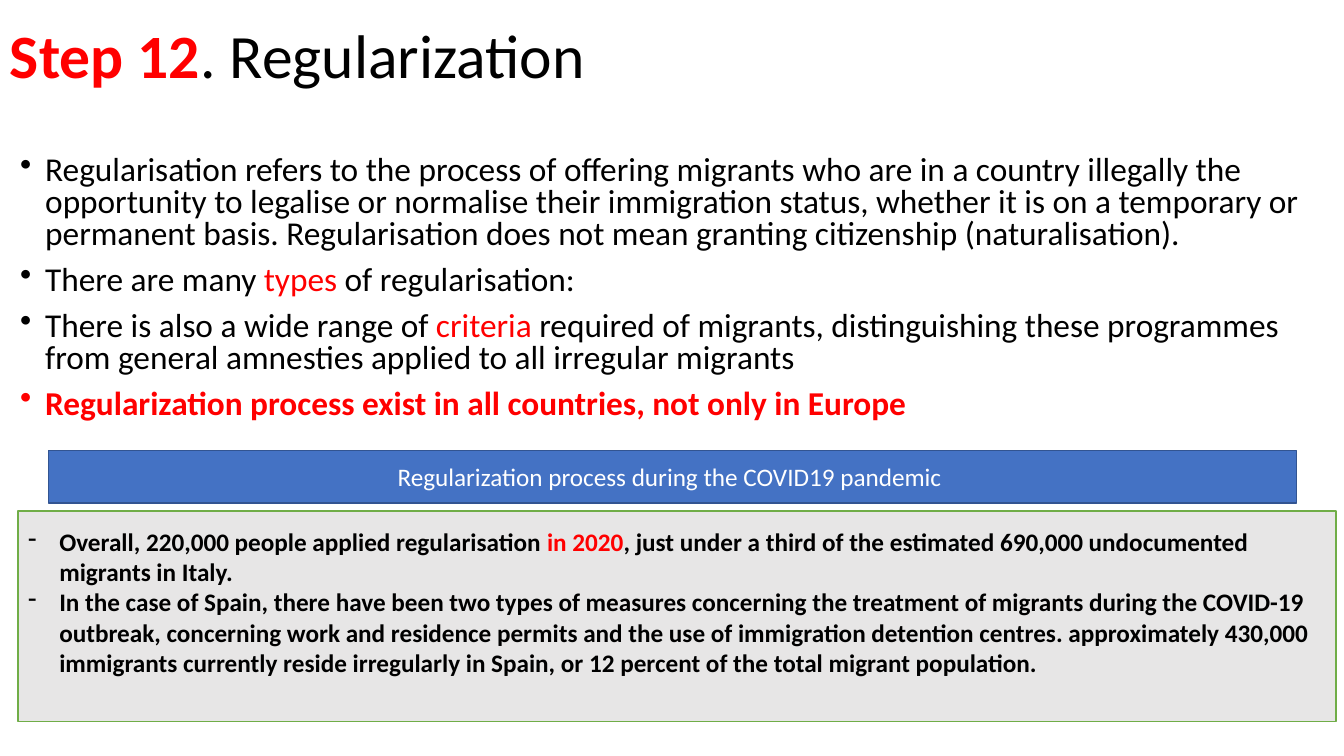
"""Build the slide about Step 12, regularization."""
from dataclasses import dataclass

from lxml.etree import SubElement
from pptx import Presentation
from pptx.dml.color import RGBColor
from pptx.enum.shapes import MSO_SHAPE
from pptx.enum.text import MSO_ANCHOR as Anchor, PP_ALIGN as Align
from pptx.oxml.ns import qn
from pptx.shapes.autoshape import Shape
from pptx.slide import Slide
from pptx.util import Inches, Pt

FONT = "Calibri"
BLACK = RGBColor(0x00, 0x00, 0x00)
WHITE = RGBColor(0xFF, 0xFF, 0xFF)
RED = RGBColor(0xFF, 0x00, 0x00)
BLUE = RGBColor(0x44, 0x72, 0xC4)
DARK_BLUE = RGBColor(0x32, 0x54, 0x91)
GREY = RGBColor(0xE7, 0xE6, 0xE6)
GREEN = RGBColor(0x70, 0xAD, 0x47)


@dataclass(frozen=True)
class Part:
    text: str
    color: RGBColor = BLACK
    bold: bool = False


@dataclass(frozen=True)
class Block:
    left: float
    top: float
    width: float
    height: float
    size: float
    paragraphs: list[list[Part]]
    fill: RGBColor | None = None
    outline: RGBColor | None = None
    anchor: Anchor = Anchor.TOP
    align: Align = Align.LEFT
    bullet: str = ""
    indent: float = 0
    line_spacing: float = 1
    space_before: float = 0
    top_inset: float = 0.05


BLOCKS = [
    Block(0, 0, 13.25, 1.17, 44,
          [[Part("Step 12", RED, True), Part(". Regularization")]],
          anchor=Anchor.MIDDLE, line_spacing=0.9),
    Block(0.1, 1.5, 13.15, 2.89, 23.8, [
        [Part("Regularisation refers to the process of offering migrants who are in a "
              "country illegally the opportunity to legalise or normalise their "
              "immigration status, whether it is on a temporary or permanent basis. "
              "Regularisation does not mean granting citizenship (naturalisation).")],
        [Part("There are many "), Part("types ", RED), Part("of regularisation:")],
        [Part("There is also a wide range of "), Part("criteria ", RED),
         Part("required of migrants, distinguishing these programmes from general "
              "amnesties applied to all irregular migrants")],
        [Part("Regularization process exist in all countries, not only in Europe",
              RED, True)],
    ], bullet="•", indent=0.25, line_spacing=0.8, space_before=10),
    Block(0.48, 4.47, 12.38, 0.52, 18,
          [[Part("Regularization process during the COVID19 pandemic ", WHITE)]],
          fill=BLUE, outline=DARK_BLUE, anchor=Anchor.MIDDLE, align=Align.CENTER),
    Block(0.18, 5.07, 13.07, 2.09, 18, [
        [Part("Overall, 220,000 people applied regularisation ", bold=True),
         Part("in 2020", RED, True),
         Part(", just under a third of the estimated 690,000 undocumented migrants "
              "in Italy.", bold=True)],
        [Part("In the case of Spain, there have been two types of measures concerning "
              "the treatment of migrants during the COVID-19 outbreak, concerning work "
              "and residence permits and the use of immigration detention centres. "
              "approximately 430,000 immigrants currently reside irregularly in Spain, "
              "or 12 percent of the total migrant population.", bold=True)],
    ], fill=GREY, outline=GREEN, bullet="-", indent=0.31, top_inset=0.15),
]


def add_frame(slide: Slide, block: Block) -> Shape:
    box = [Inches(n) for n in (block.left, block.top, block.width, block.height)]
    if block.fill is None:
        return slide.shapes.add_textbox(*box)
    shape = slide.shapes.add_shape(MSO_SHAPE.RECTANGLE, *box)
    shape.shadow.inherit = False
    shape.fill.solid()
    shape.fill.fore_color.rgb = block.fill
    shape.line.color.rgb = block.outline
    shape.line.width = Pt(1)
    return shape


def add_block(slide: Slide, block: Block) -> None:
    frame = add_frame(slide, block).text_frame
    frame.word_wrap = True
    frame.vertical_anchor = block.anchor
    frame.margin_top = Inches(block.top_inset)
    for index, parts in enumerate(block.paragraphs):
        paragraph = frame.add_paragraph() if index else frame.paragraphs[0]
        paragraph.alignment = block.align
        paragraph.line_spacing = block.line_spacing
        paragraph.space_before = Pt(block.space_before if index else 0)
        if block.bullet:
            properties = paragraph._p.get_or_add_pPr()
            properties.set("marL", str(Inches(block.indent)))
            properties.set("indent", str(-Inches(block.indent)))
            SubElement(properties, qn("a:buChar"), char=block.bullet)
        paragraph.font.name = FONT
        paragraph.font.size = Pt(block.size)
        for part in parts:
            run = paragraph.add_run()
            run.text = part.text
            font = paragraph.font if len(parts) == 1 else run.font
            font.bold = part.bold
            font.color.rgb = part.color


def main() -> None:
    presentation = Presentation()
    presentation.slide_width = Inches(13.33)
    presentation.slide_height = Inches(7.5)
    slide = presentation.slides.add_slide(presentation.slide_layouts[6])
    for block in BLOCKS:
        add_block(slide, block)
    presentation.save("out.pptx")


if __name__ == "__main__":
    main()
